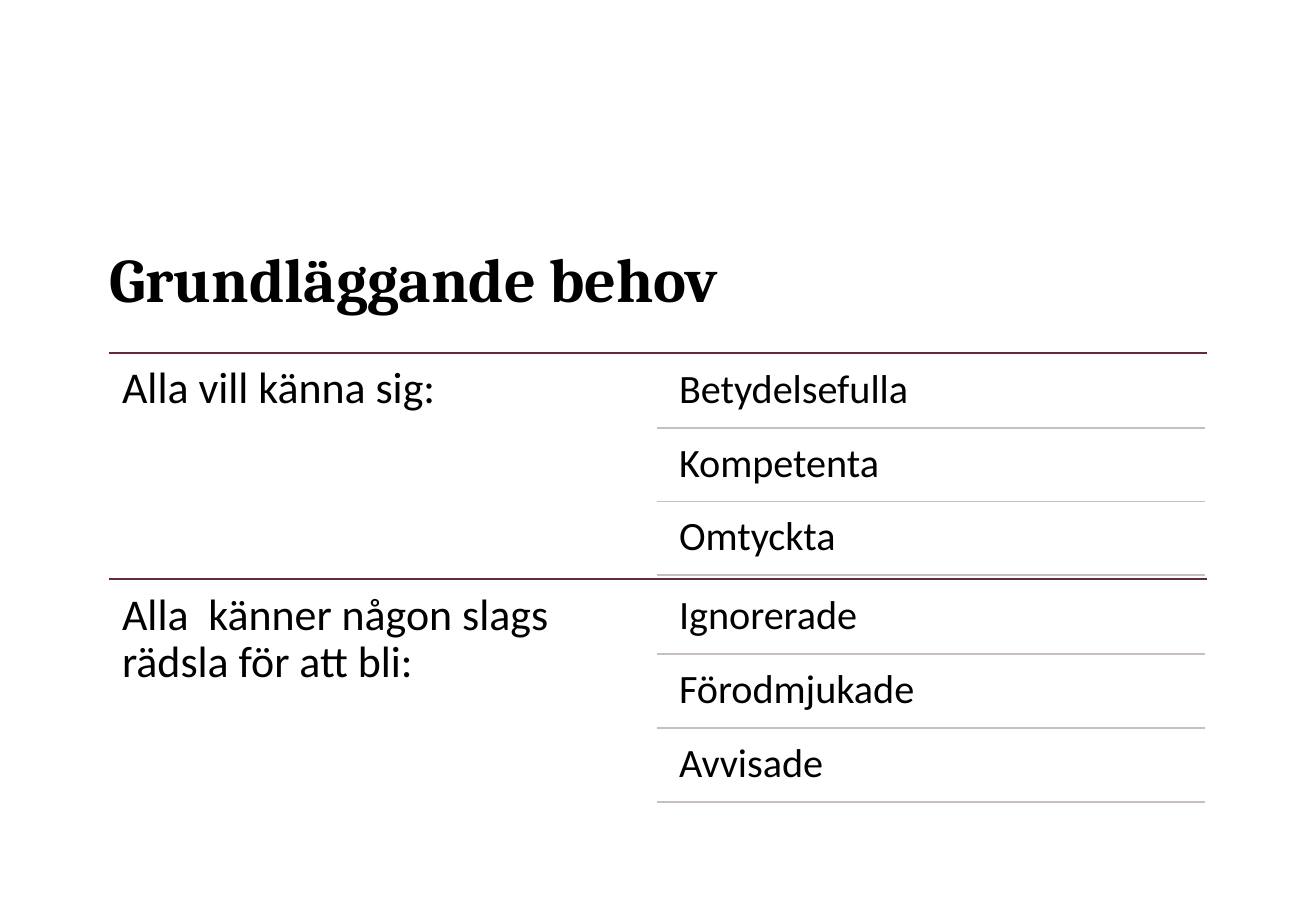
from lxml import etree
from pptx import Presentation
from pptx import util as u
from pptx.dml.color import RGBColor
from pptx.enum import shapes, text
from pptx.oxml.ns import qn

TITLE = "Grundläggande behov"
SECTIONS = [
    ("Alla vill känna sig:", ["Betydelsefulla", "Kompetenta", "Omtyckta"]),
    ("Alla  känner någon slags rädsla för att bli:",
     ["Ignorerade", "Förodmjukade", "Avvisade"]),
]

PX = 9144  # 100 px to the inch
WIDTH, HEIGHT = 1000, 695
LEFT, RIGHT = 83, 917
TOP, SECTION_HEIGHT = 268, 172
ROW_LEFT, ROW_RIGHT, ROW_TEXT_LEFT = 499, 916, 507
ROW_GAP, ROW_HEIGHT, ROW_PITCH = 3, 54, 56
BLACK, WINE, GREY = "000000", "642A3F", "C6BEC0"


def px(value):
    return u.Emu(value * PX)


def colour(code):
    return RGBColor.from_string(code)


def write(box, words, *, size, font="Calibri", bold=False, inset=0,
          anchor=text.MSO_ANCHOR.TOP, after=0):
    frame = box.text_frame
    frame.word_wrap = True
    frame.auto_size = text.MSO_AUTO_SIZE.NONE
    frame.vertical_anchor = anchor
    frame.margin_left = frame.margin_right = px(inset)
    frame.margin_top = frame.margin_bottom = px(inset)
    para = frame.paragraphs[0]
    para.alignment = text.PP_ALIGN.LEFT
    para.line_spacing = 0.9
    para.space_before = u.Pt(0)
    para.space_after = u.Pt(after)
    span = para.add_run()
    span.text = words
    span.font.name = font
    span.font.size = u.Pt(size)
    span.font.bold = bold
    span.font.color.rgb = colour(BLACK)


def add_text(page, words, left, top, width, height, **style):
    box = page.shapes.add_textbox(px(left), px(top), px(width), px(height))
    write(box, words, **style)


def add_rule(page, left, right, y, code):
    """Draw a horizontal line without a shadow."""
    line = page.shapes.add_connector(
        shapes.MSO_CONNECTOR.STRAIGHT, px(left), px(y), px(right), px(y))
    line.line.color.rgb = colour(code)
    line.line.width = u.Pt(1)
    etree.SubElement(line._element.spPr, qn("a:effectLst"))


def add_section(page, heading, rows, top):
    add_rule(page, LEFT, RIGHT, top, WINE)
    add_text(page, heading, LEFT, top, (RIGHT - LEFT) // 2, SECTION_HEIGHT,
             size=24, inset=10, after=8)
    for index, words in enumerate(rows):
        row_top = top + ROW_GAP + index * ROW_PITCH
        add_text(page, words, ROW_TEXT_LEFT, row_top, ROW_RIGHT - ROW_TEXT_LEFT,
                 ROW_HEIGHT, size=22, inset=9, after=8)
        add_rule(page, ROW_LEFT, ROW_RIGHT, row_top + ROW_HEIGHT, GREY)


def main():
    deck = Presentation()
    deck.slide_width, deck.slide_height = px(WIDTH), px(HEIGHT)
    page = deck.slides.add_slide(deck.slide_layouts[5])
    title = page.shapes.title
    title.left, title.top, title.width, title.height = map(px, (LEFT, 84, 835, 156))
    write(title, TITLE, size=34, font="Cambria", bold=True,
          anchor=text.MSO_ANCHOR.BOTTOM)
    for index, (heading, rows) in enumerate(SECTIONS):
        add_section(page, heading, rows, TOP + index * SECTION_HEIGHT)
    deck.save("out.pptx")


if __name__ == "__main__":
    main()
